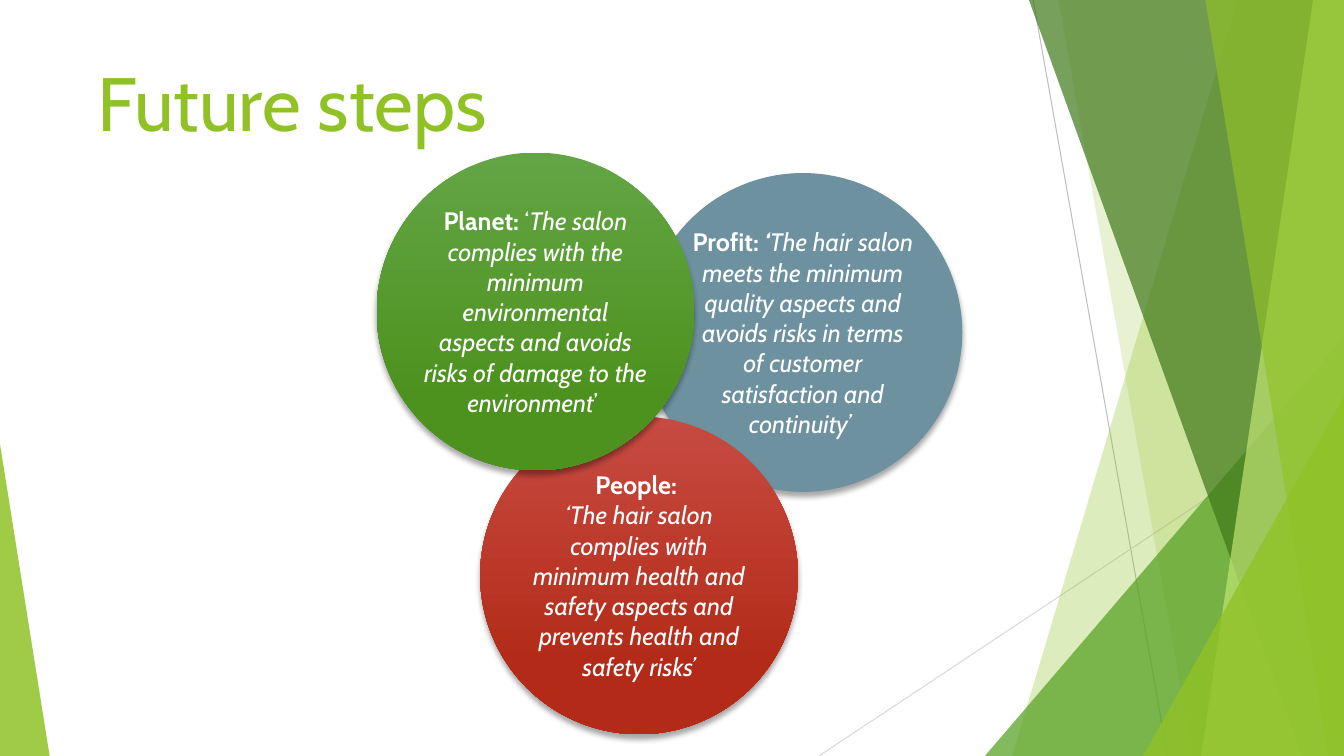
import pptx
import pptx.util
import pptx.dml.color
import pptx.enum.shapes
import pptx.enum.text
import pptx.oxml
import pptx.oxml.ns

Pt = pptx.util.Pt
Kind = pptx.enum.shapes.MSO_SHAPE
Anchor = pptx.enum.text.MSO_ANCHOR
Align = pptx.enum.text.PP_ALIGN
NS = pptx.oxml.ns.nsdecls("a")


def tint(color, hue, alpha=100):
    """Set a colour from a hex string, with opacity in percent."""
    color.rgb = pptx.dml.color.RGBColor.from_string(hue)
    if alpha < 100:
        node = pptx.oxml.parse_xml(f'<a:alpha {NS} val="{alpha * 1000}"/>')
        color._xFill.find(".//" + pptx.oxml.ns.qn("a:srgbClr")).append(node)


deck = pptx.Presentation()
deck.slide_width, deck.slide_height = Pt(960), Pt(540)
slide = deck.slides.add_slide(deck.slide_layouts[5])
shapes = slide.shapes

# Thin lines behind the facets
for x1, y1, x2, y2, hue in [
    (738, 0, 834, 540, "BFBFBF"),
    (960, 291, 585, 540, "D9D9D9"),
]:
    line = shapes.add_connector(
        pptx.enum.shapes.MSO_CONNECTOR.STRAIGHT, Pt(x1), Pt(y1), Pt(x2), Pt(y2))
    tint(line.line.color, hue)
    line.line.width = Pt(0.75)
    line.element.spPr.append(pptx.oxml.parse_xml(f"<a:effectLst {NS}/>"))

# Facets: a quad has its left edge's top and bottom x and ends at the right
# side; a triangle has left, top, width and the place of its tip
facets = [
    ((884, 723), "90C226", 30),
    ((756, 852), "90C226", 20),
    ((703.5, 240.5, 256.5, 1), "54A021", 72),
    ((735, 929.5), "3F7819", 70),
    ((938, 858), "C0E474", 70),
    ((861, 949), "90C226", 65),
    ((816.5, 283.5, 143.5, 1), "90C226", 80),
    ((0, 317, 35.5, 0), "90C226", 85),
]
for spot, hue, alpha in facets:
    if len(spot) == 2:
        top, base = spot
        path = shapes.build_freeform(top, 0, scale=Pt(1))
        path.add_line_segments([(960, 0), (960, 540), (base, 540)])
        facet = path.convert_to_shape()
    else:
        left, top, width, tip = spot
        facet = shapes.add_shape(
            Kind.ISOSCELES_TRIANGLE, Pt(left), Pt(top), Pt(width), Pt(540 - top))
        facet.adjustments[0] = tip
    facet.shadow.inherit = False
    facet.fill.solid()
    tint(facet.fill.fore_color, hue, alpha)
    facet.line.fill.background()

# Circles: left, top, fill colours, paragraphs of (text, bold, italic)
circles = [
    (460, 124, ["6E91A0"], [[
        ("Profit: ", True, False),
        ("‘", True, True),
        ("The hair salon meets the minimum quality aspects and avoids risks "
         "in terms of customer satisfaction and continuity’ ", False, True)]]),
    (343, 297.5, ["C74B42", "B32B18"], [
        [("People: ", True, False)],
        [("‘The hair salon complies with minimum health and safety aspects "
          "and prevents health and safety risks’", False, True)]]),
    (269, 109, ["63A545", "4D921E"], [[
        ("Planet: ", True, False),
        ("‘", False, False),
        ("The salon complies with the minimum environmental aspects and "
         "avoids risks of damage to the environment", False, True),
        ("’ ", False, False)]]),
]
for left, top, hues, paras in circles:
    disc = shapes.add_shape(Kind.OVAL, Pt(left), Pt(top), Pt(227), Pt(227))
    if len(hues) == 1:
        disc.fill.solid()
        tint(disc.fill.fore_color, hues[0])
        tint(disc.line.color, hues[0])
        disc.line.width = Pt(0.75)
    else:
        disc.fill.gradient()
        disc.fill.gradient_angle = 270
        for stop, hue, place in zip(disc.fill.gradient_stops, hues, (0, 0.78)):
            tint(stop.color, hue)
            stop.position = place
        disc.line.fill.background()

    # Soft shadow straight below
    disc.element.spPr.append(pptx.oxml.parse_xml(
        f'<a:effectLst {NS}><a:outerShdw blurRad="{Pt(4)}" dist="{Pt(3)}" '
        'dir="5400000" rotWithShape="0"><a:srgbClr val="000000">'
        '<a:alpha val="35000"/></a:srgbClr></a:outerShdw></a:effectLst>'))

    frame = disc.text_frame
    frame.word_wrap = True
    frame.vertical_anchor = Anchor.MIDDLE
    frame.margin_left = frame.margin_right = 0
    frame.margin_top = frame.margin_bottom = 0
    for i, runs in enumerate(paras):
        para = frame.add_paragraph() if i else frame.paragraphs[0]
        para.alignment = Align.CENTER
        para.font.name, para.font.size = "Cabin", Pt(18)
        tint(para.font.color, "FFFFFF")
        for text, bold, slant in runs:
            run = para.add_run()
            run.text = text
            run.font.bold, run.font.italic = bold, slant

# Title, in front of the rest
title = shapes.title
title.left, title.top, title.width, title.height = Pt(62.5), Pt(26.5), Pt(680), Pt(82)
title.element.getparent().append(title.element)
frame = title.text_frame
frame.text = "Future steps"
frame.auto_size = pptx.enum.text.MSO_AUTO_SIZE.NONE
frame.vertical_anchor = Anchor.BOTTOM
para = frame.paragraphs[0]
para.alignment = Align.LEFT
para.line_spacing = 1.0
para.font.name, para.font.size = "Cabin", Pt(54)
tint(para.font.color, "90C226")

deck.save("out.pptx")
